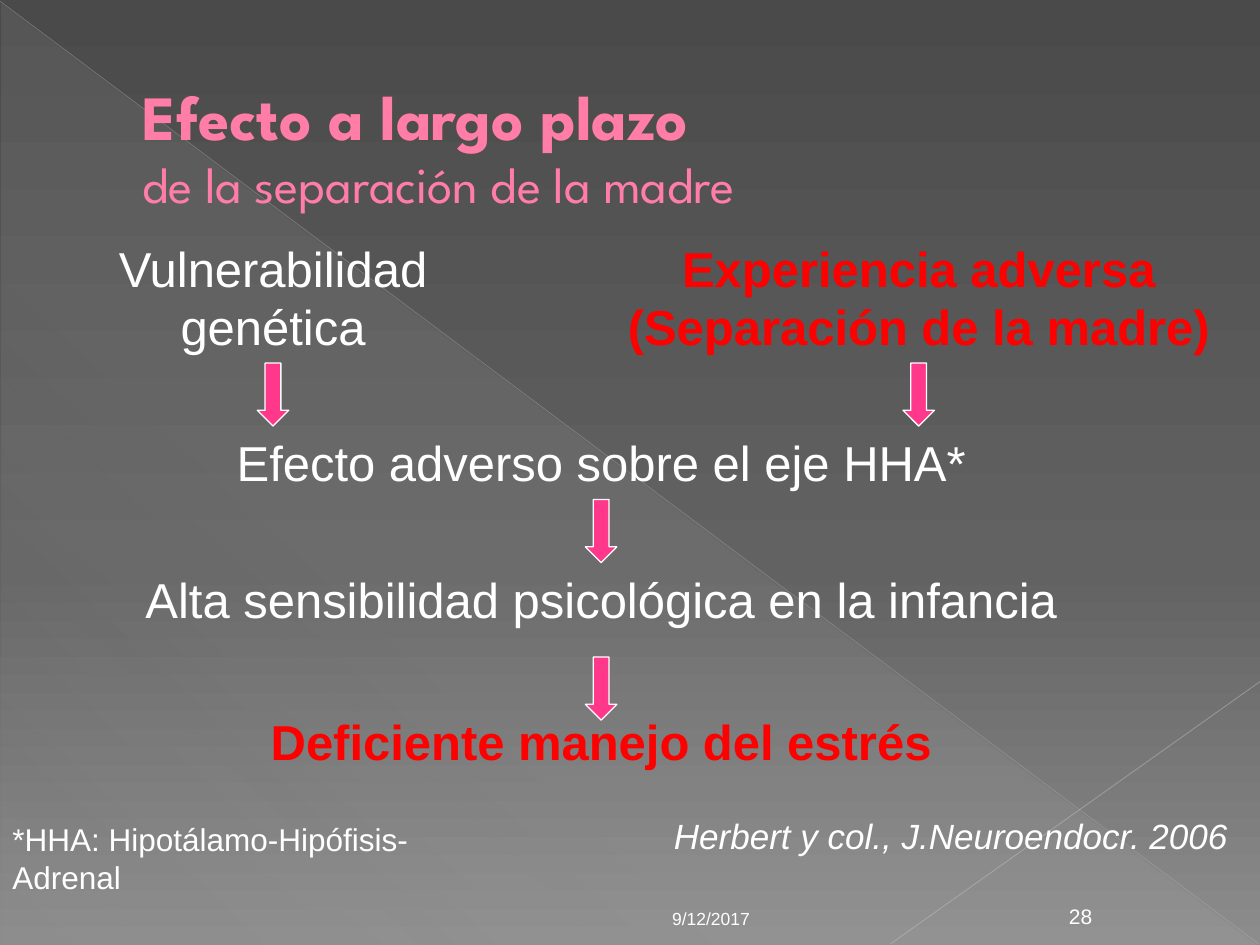
from lxml.etree import SubElement as Sub
from pptx import Presentation
from pptx.dml.color import RGBColor as Rgb
from pptx.enum.shapes import MSO_CONNECTOR as Conn, MSO_SHAPE as Kind
from pptx.enum.text import MSO_ANCHOR as Anchor, PP_ALIGN as Align
from pptx.oxml.ns import qn
from pptx.util import Pt

HEX = {"white": "FFFFFF", "red": "FF0000", "pink": "FF7DA7", "arrow": "FF388C"}

# Content: size and bold for each line of the title
TITLE = [("Efecto a largo plazo", 36, True),
         ("de la separación de la madre", 28.8, False)]

# Steps: text, centre x, top, width, height, colour
STEPS = [
    ("Vulnerabilidad\ngenética", 156, 132.5, 192, 74, "white"),
    ("Experiencia adversa\n(Separación de la madre)", 525, 132.5, 351, 74, "red"),
    ("Efecto adverso sobre el eje HHA*", 343.5, 243.5, 432, 41, "white"),
    ("Alta sensibilidad psicológica en la infancia", 343.5, 322, 537, 41, "white"),
    ("Deficiente manejo del estrés", 343.5, 403, 397, 41, "red"),
]
# Arrows: centre x, top
ARROWS = [(156, 207.5), (525, 207.5), (343.5, 285.5), (343.5, 375.5)]

# Notes: text, left, top, width, height, size, italic, align, anchor
NOTES = [
    ("*HHA: Hipotálamo-Hipófisis-Adrenal", 0, 465, 302, 29, 18, False,
     Align.LEFT, Anchor.TOP),
    ("Herbert y col., J.Neuroendocr. 2006", 378, 462, 331, 31, 20, True,
     Align.LEFT, Anchor.TOP),
    ("9/12/2017", 377, 510.5, 168, 24, 10, False, Align.LEFT, Anchor.BOTTOM),
    ("28", 597.5, 510.5, 40, 24, 12, False, Align.CENTER, Anchor.BOTTOM),
]

# Backdrop: gradient stops are place, colour, opacity in percent
BACK = [(0, "4A4A4A", 100), (60, "626262", 100), (100, "8C8C8C", 100)]
SHADE = [(0, "D2D2D2", 10), (70, "D2D2D2", 8), (100, "D2D2D2", 1)]
# Lines: start x, y, end x, y, colour, width, opacity
LINES = [(0, 0.7, 719.3, 539.3, "BFBFBF", 0.39, 35),
         (720, 389.5, 509, 539.3, "C6C6C6", 0.47, 45)]


def fade(clr, pct):
    Sub(clr, qn("a:alpha"), val=str(pct * 1000))


def blend(fill, root, stops, turn):
    fill.gradient()
    grad = next(root.iter(qn("a:gradFill")))
    for kid in list(grad):
        grad.remove(kid)
    row = Sub(grad, qn("a:gsLst"))
    for pos, tone, pct in stops:
        stop = Sub(row, qn("a:gs"), pos=str(pos * 1000))
        fade(Sub(stop, qn("a:srgbClr"), val=tone), pct)
    Sub(grad, qn("a:lin"), ang=str(turn * 60000), scaled="0")


def style(font, size, tone, name="Arial", bold=False, italic=False):
    font.size, font.name = Pt(size), name
    font.bold, font.italic = bold, italic
    font.color.rgb = Rgb.from_string(HEX[tone])


def label(text, box, size, tone, bold=False, italic=False,
          align=Align.CENTER, anchor=Anchor.TOP, wrap=False):
    frame = slide.shapes.add_textbox(*map(Pt, box)).text_frame
    frame.text = text
    frame.word_wrap, frame.vertical_anchor = wrap, anchor
    for para in frame.paragraphs:
        para.alignment = align
        for run in para.runs:
            style(run.font, size, tone, bold=bold, italic=italic)


deck = Presentation()
deck.slide_width, deck.slide_height = Pt(720), Pt(540)
slide = deck.slides.add_slide(deck.slide_layouts[5])
shapes = slide.shapes

# Backdrop
blend(slide.background.fill, slide.element, BACK, 90)
wedge = shapes.add_shape(Kind.RIGHT_TRIANGLE, Pt(0.7), Pt(1.4), Pt(718.6), Pt(538.6))
wedge.shadow.inherit = False
wedge.line.fill.background()
blend(wedge.fill, wedge.element, SHADE, 133)
for x1, y1, x2, y2, tone, width, pct in LINES:
    line = shapes.add_connector(Conn.STRAIGHT, Pt(x1), Pt(y1), Pt(x2), Pt(y2))
    line.line.color.rgb = Rgb.from_string(tone)
    line.line.width = Pt(width)
    fade(next(line.element.spPr.iter(qn("a:srgbClr"))), pct)
    Sub(line.element.spPr, qn("a:effectLst"))

# Title, brought in front of the backdrop
title = shapes.title
shapes.element.append(title.element)
title.left, title.top, title.width, title.height = map(Pt, (36, 43, 648, 90))
frame = title.text_frame
frame.text = "\v".join(text for text, _, _ in TITLE)
frame.vertical_anchor, frame.word_wrap = Anchor.TOP, True
frame.margin_left, frame.margin_top = Pt(45.5), Pt(1.5)
para = frame.paragraphs[0]
para.alignment = Align.LEFT
for run, (_, size, bold) in zip(para.runs, TITLE):
    style(run.font, size, "pink", "League Spartan", bold)

# Steps and arrows
for text, mid, top, width, height, tone in STEPS:
    label(text, (mid - width / 2, top, width, height), 28, tone, bold=tone == "red")
for mid, top in ARROWS:
    arrow = shapes.add_shape(Kind.DOWN_ARROW, Pt(mid - 9), Pt(top), Pt(18), Pt(36))
    arrow.shadow.inherit = False
    arrow.fill.solid()
    arrow.fill.fore_color.rgb = Rgb.from_string(HEX["arrow"])
    arrow.line.color.rgb = Rgb.from_string(HEX["white"])
    arrow.line.width = Pt(0.75)

# Notes, date and number
for text, *box, size, italic, align, anchor in NOTES:
    label(text, box, size, "white", italic=italic, align=align, anchor=anchor,
          wrap=anchor == Anchor.BOTTOM)

deck.save("out.pptx")
